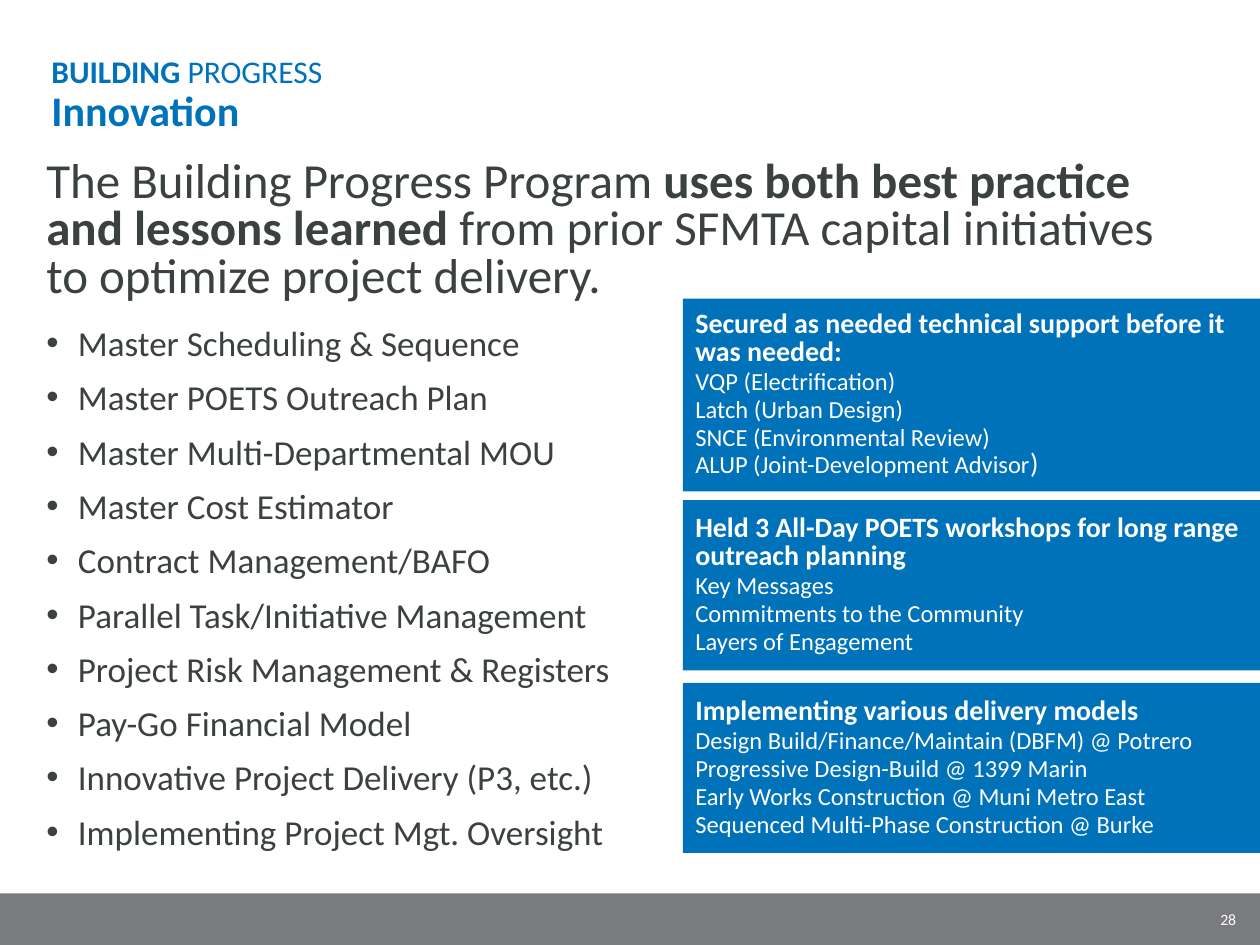
from lxml import etree
from pptx import Presentation
from pptx import util as u
from pptx.dml.color import RGBColor
from pptx.enum import shapes, text
from pptx.oxml.ns import qn

BLUE = RGBColor(0x00, 0x72, 0xBA)
GRAY = RGBColor(0x7A, 0x7B, 0x7F)
INK = RGBColor(0x3B, 0x40, 0x41)
WHITE = RGBColor(0xFF, 0xFF, 0xFF)
FONT = "Calibri"

# Runs are (text, size, bold)
TITLE = [[("BUILDING ", 18, True), ("PROGRESS", 18, False)],
         [("Innovation", 24, True)]]
LEAD = [("The Building Progress Program ", 28, False),
        ("uses both best practice and lessons learned", 28, True),
        (" from prior SFMTA capital initiatives to optimize project delivery.", 28, False)]
PRACTICES = [
    "Master Scheduling & Sequence",
    "Master POETS Outreach Plan",
    "Master Multi-Departmental MOU",
    "Master Cost Estimator",
    "Contract Management/BAFO",
    "Parallel Task/Initiative Management",
    "Project Risk Management & Registers",
    "Pay-Go Financial Model",
    "Innovative Project Delivery (P3, etc.)",
    "Implementing Project Mgt. Oversight",
]
# Cards are (top, height, heading, lines)
CARDS = [
    (2.37, 1.53, "Secured as needed technical support before it was needed:",
     ["VQP (Electrification)", "Latch (Urban Design)",
      "SNCE (Environmental Review)", "ALUP (Joint-Development Advisor)"]),
    (3.97, 1.35, "Held 3 All-Day POETS workshops for long range outreach planning",
     ["Key Messages", "Commitments to the Community", "Layers of Engagement"]),
    (5.42, 1.35, "Implementing various delivery models",
     ["Design Build/Finance/Maintain (DBFM) @ Potrero",
      "Progressive Design-Build @ 1399 Marin",
      "Early Works Construction @ Muni Metro East",
      "Sequenced Multi-Phase Construction @ Burke"]),
]
PAGE = [("28", 9, False)]

WIDTH, HEIGHT = 10, 7.5
FOOTER_TOP = 7.09
BODY_LEFT = 0.27
CARD_LEFT = 5.42

deck = Presentation()
deck.slide_width, deck.slide_height = u.Inches(WIDTH), u.Inches(HEIGHT)
slide = deck.slides.add_slide(deck.slide_layouts[6])


def add_band(left, top, width, height, color):
    band = slide.shapes.add_shape(shapes.MSO_SHAPE.RECTANGLE,
                                  *map(u.Inches, (left, top, width, height)))
    band.shadow.inherit = False
    band.fill.solid()
    band.fill.fore_color.rgb = color
    band.line.fill.background()
    return band.text_frame


def add_box(left, top, width, height):
    return slide.shapes.add_textbox(*map(u.Inches, (left, top, width, height))).text_frame


def add_runs(paragraph, runs, color):
    for words, size, bold in runs:
        run = paragraph.add_run()
        run.text = words
        style = {"name": FONT, "size": u.Pt(size), "bold": bold}
        for key, value in style.items():
            setattr(run.font, key, value)
        run.font.color.rgb = color


def add_bullet(paragraph):
    properties = paragraph._p.get_or_add_pPr()
    properties.set("marL", str(u.Inches(0.25)))
    properties.set("indent", str(-u.Inches(0.25)))
    etree.SubElement(properties, qn("a:buFont")).set("typeface", "Arial")
    etree.SubElement(properties, qn("a:buChar")).set("char", "•")


def fill_frame(frame, paragraphs, color, bullets=False,
               anchor=text.MSO_ANCHOR.TOP, **layout):
    """Write one paragraph per list of runs; layout holds paragraph attributes."""
    frame.word_wrap = True
    frame.vertical_anchor = anchor
    for index, runs in enumerate(paragraphs):
        paragraph = frame.paragraphs[0] if index == 0 else frame.add_paragraph()
        if bullets:
            add_bullet(paragraph)
        for key, value in {"alignment": text.PP_ALIGN.LEFT, **layout}.items():
            setattr(paragraph, key, value)
        add_runs(paragraph, runs, color)


add_band(0, FOOTER_TOP, WIDTH, HEIGHT - FOOTER_TOP, GRAY)
fill_frame(add_box(9.31, FOOTER_TOP, 0.6, HEIGHT - FOOTER_TOP), [PAGE], WHITE,
           anchor=text.MSO_ANCHOR.MIDDLE, alignment=text.PP_ALIGN.RIGHT)

title = add_box(0.31, 0.4, 9, 1.03)
fill_frame(title, TITLE[:1], BLUE, line_spacing=0.9)
title.paragraphs[0].add_line_break()
add_runs(title.paragraphs[0], TITLE[1], BLUE)

fill_frame(add_box(BODY_LEFT, 1.23, 9.34, 0.87), [LEAD], INK, line_spacing=u.Pt(27))
fill_frame(add_box(BODY_LEFT, 2.49, 5.8, 0.87),
           [[(practice, 20, False)] for practice in PRACTICES], INK,
           bullets=True, line_spacing=u.Pt(25), space_after=u.Pt(6))

for top, height, heading, lines in CARDS:
    card = [[(heading, 16, True)]] + [[(line, 14, False)] for line in lines]
    if lines[-1].endswith(")"):
        card[-1] = [(lines[-1][:-1], 14, False), (")", 16, False)]
    fill_frame(add_band(CARD_LEFT, top, WIDTH - CARD_LEFT, height, BLUE), card, WHITE,
               anchor=text.MSO_ANCHOR.MIDDLE, line_spacing=u.Pt(16))

deck.save("out.pptx")
